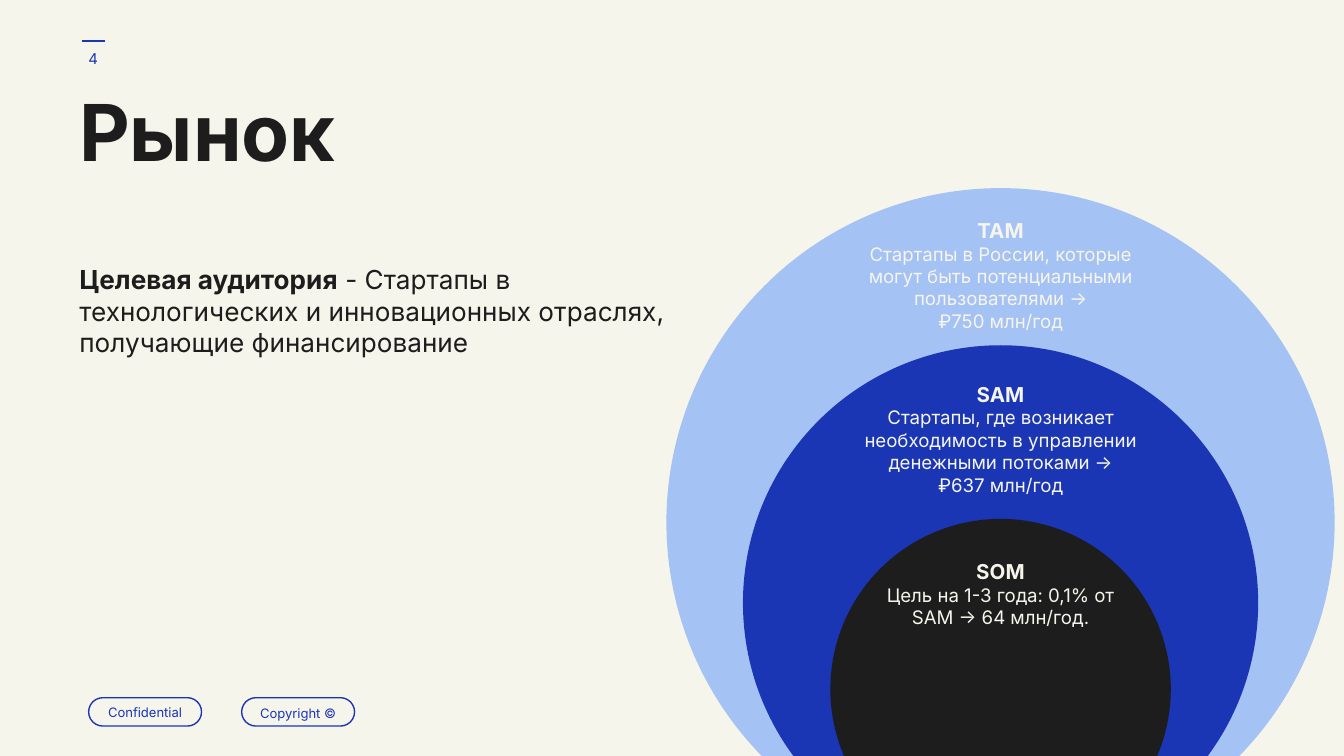
from dataclasses import dataclass

from lxml.etree import SubElement
from pptx import Presentation
from pptx.dml.color import RGBColor
from pptx.enum.shapes import MSO_CONNECTOR, MSO_SHAPE
from pptx.enum.text import MSO_ANCHOR, PP_ALIGN
from pptx.oxml.ns import qn
from pptx.util import Pt


@dataclass(frozen=True)
class Theme:
    font: str = "Inter"
    cream: RGBColor = RGBColor(0xF6, 0xF5, 0xEC)
    ink: RGBColor = RGBColor(0x1D, 0x1D, 0x1D)
    blue: RGBColor = RGBColor(0x1A, 0x36, 0xB4)
    sky: RGBColor = RGBColor(0xA4, 0xC2, 0xF4)
    title_size: int = 42
    body_size: int = 14
    heading_size: int = 11
    label_size: int = 10
    number_size: int = 8
    pill_size: int = 7
    line_width: float = 0.75
    inset: float = 7.2


THEME = Theme()
CIRCLE_CENTER = 536


def style_paragraph(paragraph, size, color, bold=False, align=PP_ALIGN.LEFT, spacing=1.0):
    paragraph.alignment = align
    paragraph.line_spacing = spacing
    font = paragraph.font
    font.name = THEME.font
    font.size = Pt(size)
    font.bold = bold
    font.color.rgb = color


def prepare_frame(shape, anchor):
    frame = shape.text_frame
    frame.word_wrap = True
    frame.vertical_anchor = anchor
    frame.margin_left = frame.margin_right = Pt(THEME.inset)
    frame.margin_top = frame.margin_bottom = Pt(THEME.inset)
    return frame


def add_text_box(slide, left, top, width, height, anchor=MSO_ANCHOR.TOP):
    shape = slide.shapes.add_textbox(Pt(left), Pt(top), Pt(width), Pt(height))
    return prepare_frame(shape, anchor)


def add_rule(slide, left, right, y):
    rule = slide.shapes.add_connector(
        MSO_CONNECTOR.STRAIGHT, Pt(right), Pt(y), Pt(left), Pt(y)
    )
    rule.line.color.rgb = THEME.blue
    rule.line.width = Pt(THEME.line_width)
    SubElement(rule.element.spPr, qn("a:effectLst"))


def add_pill(slide, left, text, spacing):
    pill = slide.shapes.add_shape(
        MSO_SHAPE.ROUNDED_RECTANGLE, Pt(left), Pt(373.8), Pt(60.5), Pt(15.2)
    )
    pill.adjustments[0] = 0.5
    pill.shadow.inherit = False
    pill.fill.background()
    pill.line.color.rgb = THEME.blue
    pill.line.width = Pt(THEME.line_width)
    paragraph = prepare_frame(pill, MSO_ANCHOR.MIDDLE).paragraphs[0]
    paragraph.text = text
    style_paragraph(
        paragraph, THEME.pill_size, THEME.blue, align=PP_ALIGN.CENTER, spacing=spacing
    )


def add_circle(slide, top, diameter, color):
    circle = slide.shapes.add_shape(
        MSO_SHAPE.OVAL,
        Pt(CIRCLE_CENTER - diameter / 2), Pt(top), Pt(diameter), Pt(diameter),
    )
    circle.shadow.inherit = False
    circle.fill.solid()
    circle.fill.fore_color.rgb = color
    circle.line.fill.background()


def add_circle_label(slide, top, width, height, heading, lines):
    frame = add_text_box(slide, CIRCLE_CENTER - width / 2, top, width, height)
    frame.text = "\n".join([heading, *lines])
    for index, paragraph in enumerate(frame.paragraphs):
        is_heading = index == 0
        size = THEME.heading_size if is_heading else THEME.label_size
        style_paragraph(paragraph, size, THEME.cream, is_heading, PP_ALIGN.CENTER)


def add_title(slide, text):
    paragraph = add_text_box(slide, 35.4, 46.8, 335.5, 54).paragraphs[0]
    paragraph.text = text
    style_paragraph(paragraph, THEME.title_size, THEME.ink, bold=True, spacing=0.8)


def add_slide_number(slide, text):
    frame = add_text_box(slide, 33.1, 15.8, 33.8, 31, MSO_ANCHOR.MIDDLE)
    paragraph = frame.paragraphs[0]
    paragraph.text = text
    style_paragraph(paragraph, THEME.number_size, THEME.blue, align=PP_ALIGN.CENTER)


def add_audience(slide, term, description):
    paragraph = add_text_box(slide, 35.4, 134, 339, 65.5).paragraphs[0]
    style_paragraph(paragraph, THEME.body_size, THEME.ink)
    term_run = paragraph.add_run()
    term_run.text = term
    term_run.font.bold = True
    paragraph.add_run().text = description


def main():
    presentation = Presentation()
    presentation.slide_width = Pt(720)
    presentation.slide_height = Pt(405)
    slide = presentation.slides.add_slide(presentation.slide_layouts[6])
    slide.background.fill.solid()
    slide.background.fill.fore_color.rgb = THEME.cream

    add_rule(slide, 44, 56, 22)
    add_pill(slide, 47.5, "Confidential", 1.0)
    add_pill(slide, 129.5, "Copyright ©", 1.15)
    add_title(slide, "Рынок")
    add_slide_number(slide, "4")

    circles = [
        (100.8, 358, THEME.sky),
        (185, 276, THEME.blue),
        (278, 182.4, THEME.ink),
    ]
    for top, diameter, color in circles:
        add_circle(slide, top, diameter, color)

    labels = [
        (109.5, 176.4, 76.3, "TAM", [
            "Стартапы в России, которые могут быть потенциальными пользователями →",
            "₽750 млн/год",
        ]),
        (197.3, 176.4, 76.3, "SAM", [
            "Стартапы, где возникает необходимость в управлении денежными потоками ->",
            "₽637 млн/год",
        ]),
        (292.3, 156.2, 51.8, "SOM", [
            "Цель на 1-3 года: 0,1% от SAM → 64 млн/год.",
        ]),
    ]
    for label in labels:
        add_circle_label(slide, *label)

    add_audience(
        slide,
        "Целевая аудитория",
        " - Стартапы в технологических и инновационных отраслях, "
        "получающие финансирование",
    )
    presentation.save("out.pptx")


if __name__ == "__main__":
    main()
